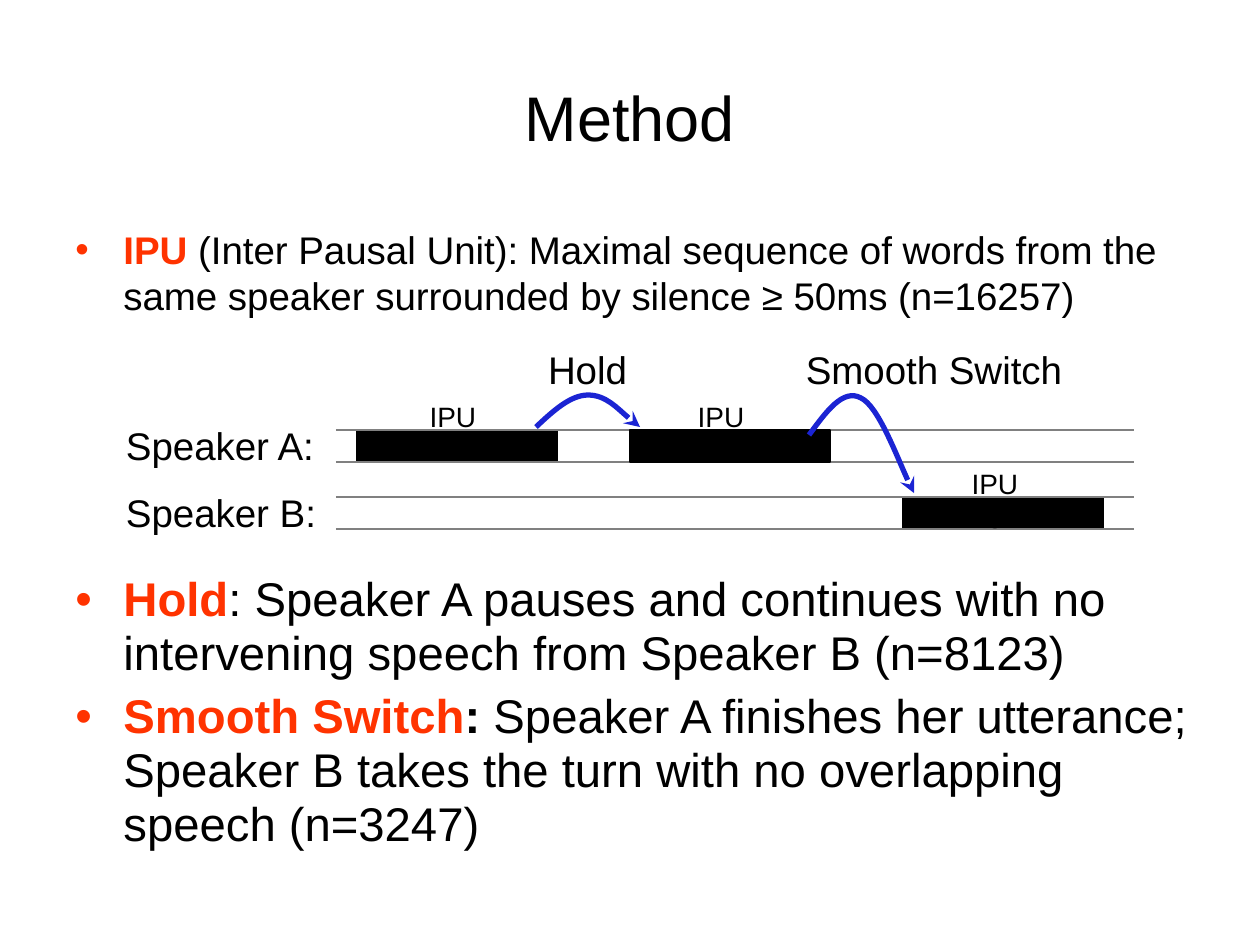
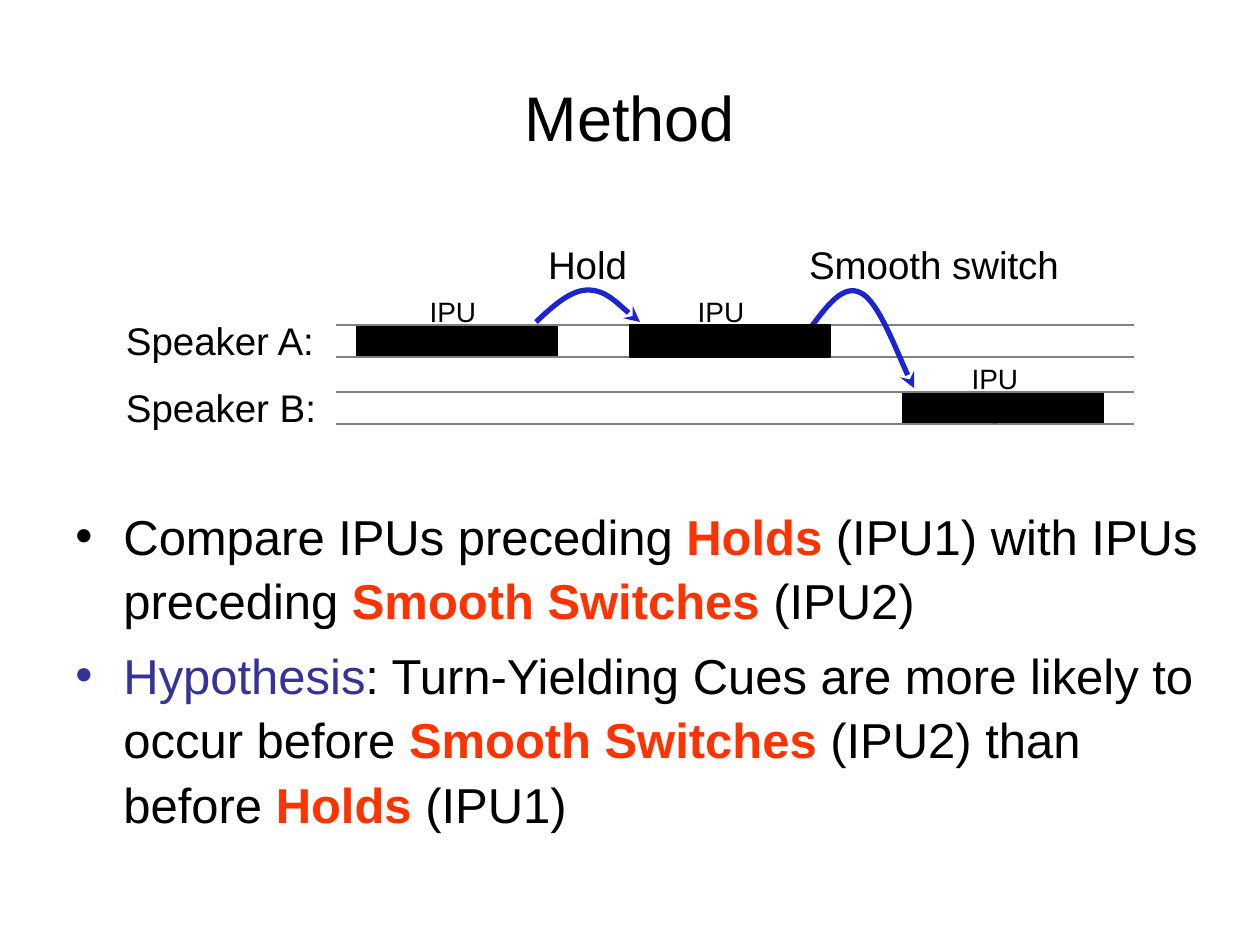
from lxml import etree
from pptx import Presentation
from pptx.dml.color import RGBColor
from pptx.enum.shapes import MSO_CONNECTOR, MSO_SHAPE
from pptx.enum.text import MSO_ANCHOR, PP_ALIGN
from pptx.oxml.ns import qn
from pptx.util import Emu, Pt

PX = 914400 / 126
FONT = "Arial"
COLORS = {"text": "000000", "term": "FF3300", "hypothesis": "333399",
          "track": "808080", "arrow": "1B24D3"}
STRAIGHT = MSO_CONNECTOR.STRAIGHT
RECTANGLE = MSO_SHAPE.RECTANGLE
LEFT, CENTER = PP_ALIGN.LEFT, PP_ALIGN.CENTER
TOP, MIDDLE = MSO_ANCHOR.TOP, MSO_ANCHOR.MIDDLE

TRACK_TOPS = (84, 151)
TRACK_LEFT, TRACK_RIGHT = 210, 1008
BAR_WIDTH, BAR_HEIGHT = 200, 32
BAR_LEFT, BAR_STEP = 231, 273
HOLD_CURVE = ((410, 81), (428, 64), (445, 49), (462, 49),
              (480, 49), (505, 75), (514, 81))
SWITCH_CURVE = ((683, 89), (700, 66), (717, 42), (735, 52),
                (752, 60), (779, 131), (788, 147))


def px(value):
    return Emu(round(value * PX))


def color(name):
    return RGBColor.from_string(COLORS[name])


def add_text_box(page, box, inset=True, wrap=True, anchor=TOP):
    frame = page.shapes.add_textbox(*map(px, box)).text_frame
    frame.word_wrap = wrap
    frame.vertical_anchor = anchor
    if not inset:
        frame.margin_left = frame.margin_right = 0
        frame.margin_top = frame.margin_bottom = 0
    return frame


def set_font(para, size):
    para.font.name = FONT
    para.font.size = Pt(size)


def add_label(page, box, text, size=22, align=LEFT, **options):
    para = add_text_box(page, box, **options).paragraphs[0]
    para.text = text
    para.alignment = align
    set_font(para, size)
    para.font.color.rgb = color("text")


def add_title(page):
    add_label(page, (63, 38, 1134, 157), "Method", 36, CENTER, anchor=MIDDLE)


def add_bullet(para, color_name):
    properties = para._p.get_or_add_pPr()
    properties.set("marL", str(px(48)))
    properties.set("indent", str(px(-48)))
    bullet_color = etree.SubElement(properties, qn("a:buClr"))
    etree.SubElement(bullet_color, qn("a:srgbClr"), val=COLORS[color_name])
    etree.SubElement(properties, qn("a:buFont"), typeface=FONT)
    etree.SubElement(properties, qn("a:buChar"), char="•")


def add_bullets(page, box, items, size, spacing=1.0):
    frame = add_text_box(page, box)
    for index, spans in enumerate(items):
        para = frame.add_paragraph() if index else frame.paragraphs[0]
        add_bullet(para, spans[0][1])
        para.line_spacing = spacing
        if index:
            para.space_before = Pt(size * 0.2)
        set_font(para, size)
        for text, color_name, bold in spans:
            span = para.add_run()
            span.text = text
            span.font.bold = bold
            span.font.color.rgb = color(color_name)


def add_track_line(page, left, top):
    line = page.shapes.add_connector(STRAIGHT, px(left + TRACK_LEFT), px(top),
                                     px(left + TRACK_RIGHT), px(top))
    line.line.color.rgb = color("track")
    line.line.width = Pt(0.75)
    etree.SubElement(line._element.spPr, qn("a:effectLst"))


def add_bar(page, left, top, column, track):
    bar = page.shapes.add_shape(
        RECTANGLE, px(left + BAR_LEFT + column * BAR_STEP),
        px(top + TRACK_TOPS[track]), px(BAR_WIDTH), px(BAR_HEIGHT))
    bar.shadow.inherit = False
    bar.fill.solid()
    bar.fill.fore_color.rgb = color("text")
    bar.line.color.rgb = color("text")
    bar.line.width = Pt(0.75)


def add_curve(page, left, top, points):
    placed = [(left + x, top + y) for x, y in points]
    builder = page.shapes.build_freeform(*placed[0], scale=PX)
    builder.add_line_segments(placed[1:], close=False)
    curve = builder.convert_to_shape()
    curve.shadow.inherit = False
    curve.fill.background()
    curve.line.color.rgb = color("arrow")
    curve.line.width = Pt(3)
    etree.SubElement(curve.line._get_or_add_ln(), qn("a:tailEnd"), type="stealth")
    outline = next(curve._element.iter(qn("a:path")))
    segments = outline.findall(qn("a:lnTo"))
    for start in range(0, len(segments), 3):
        bezier = etree.SubElement(outline, qn("a:cubicBezTo"))
        for segment in segments[start:start + 3]:
            bezier.append(segment[0])
            outline.remove(segment)


def add_turn_diagram(page, left, top, switch_label, switch_in_front):
    add_bar(page, left, top, 0, 0)
    add_bar(page, left, top, 2, 1)
    for speaker, track_top in zip("AB", TRACK_TOPS):
        add_label(page, (left, top + track_top - 8, 200, 47),
                  f"Speaker {speaker}:", inset=False)
        for edge in (0, BAR_HEIGHT):
            add_track_line(page, left, top + track_top + edge)
    add_curve(page, left, top, HOLD_CURVE)
    if switch_in_front:
        add_bar(page, left, top, 1, 0)
        add_curve(page, left, top, SWITCH_CURVE)
    else:
        add_curve(page, left, top, SWITCH_CURVE)
        add_bar(page, left, top, 1, 0)
    for text, x, width in (("Hold", 388, 147), (switch_label, 661, 294)):
        add_label(page, (left + x, top, width, 47), text, align=CENTER, inset=False)
    for text, x, track in (("IPU1", 296, 0), ("IPU2", 564, 0), ("IPU3", 838, 1)):
        add_label(page, (left + x, top + TRACK_TOPS[track] - 30, 62, 34),
                  text, 16, CENTER, inset=False, wrap=False)


def build_definitions(page):
    add_title(page)
    add_bullets(page, (63, 567, 1176, 294), [
        [("Hold", "term", True),
         (": Speaker A pauses and continues with no intervening speech "
          "from Speaker B (n=8123)", "text", False)],
        [("Smooth Switch", "term", True), (":", "text", True),
         (" Speaker A finishes her utterance; Speaker B takes the turn "
          "with no overlapping speech (n=3247)", "text", False)],
    ], 27, 0.95)
    add_bullets(page, (63, 220, 1187, 158), [
        [("IPU", "term", True),
         (" (Inter Pausal Unit): Maximal sequence of words from the same "
          "speaker surrounded by silence ≥ 50ms (n=16257)", "text", False)],
    ], 22)
    add_turn_diagram(page, 126, 346, "Smooth Switch", True)


def build_hypothesis(page):
    add_title(page)
    add_bullets(page, (63, 494, 1155, 348), [
        [("Compare IPUs preceding ", "text", False), ("Holds ", "term", True),
         ("(IPU1) with IPUs preceding ", "text", False),
         ("Smooth Switches ", "term", True), ("(IPU2)", "text", False)],
        [("Hypothesis", "hypothesis", False),
         (": Turn-Yielding Cues are more likely to occur before ", "text", False),
         ("Smooth Switches", "term", True), (" (IPU2) than before ", "text", False),
         ("Holds ", "term", True), ("(IPU1)", "text", False)],
    ], 28, 1.1)
    add_turn_diagram(page, 126, 241, "Smooth switch", False)


def main():
    deck = Presentation()
    deck.slide_width, deck.slide_height = px(1260), px(945)
    for build in (build_definitions, build_hypothesis):
        build(deck.slides.add_slide(deck.slide_layouts[6]))
    deck.save("out.pptx")


if __name__ == "__main__":
    main()
